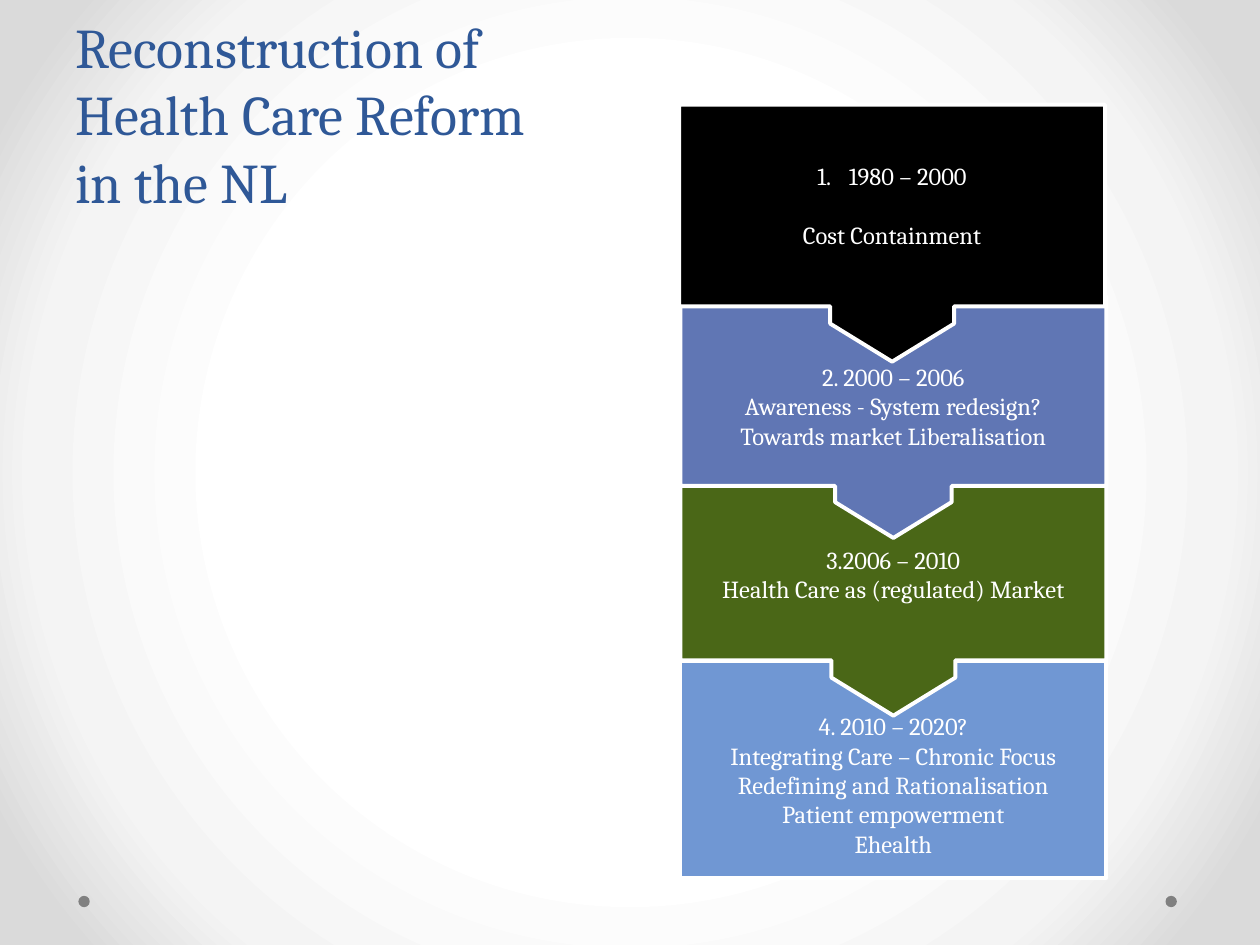
from dataclasses import dataclass

from lxml import etree
from pptx import Presentation
from pptx import util as u
from pptx.dml.color import RGBColor
from pptx.enum import shapes, text
from pptx.oxml import parse_xml
from pptx.oxml.ns import nsdecls, qn

Pt = u.Pt


@dataclass(frozen=True)
class Theme:
    font: str = "Cambria"
    title_size: float = 32
    body_size: float = 14
    line_height: float = 17
    outline: float = 2.25
    title: str = "2F5897"
    white: str = "FFFFFF"
    dot: str = "808080"
    phases: tuple = ("000000", "6076B4", "4A6717", "7097D3")
    backdrop: tuple = ((50, "FFFFFF"), (76, "F4F4F4"), (92, "DADADA"))


T = Theme()
PHASE_LEFT, PHASE_WIDTH = 388.8, 243.4
CALLOUT = (0.482, 0.241, 0.148, 0.785)

# Top, height and lines of each phase, from first to last
PHASES = (
    (59.8, 146.9, ("1980 – 2000", "Cost Containment")),
    (169.2, 138.2, ("2. 2000 – 2006", "Awareness - System redesign?",
                    "Towards market Liberalisation")),
    (262.1, 146.9, ("3.2006 – 2010", "Health Care as (regulated) Market")),
    (378, 123.8, ("4. 2010 – 2020?", "Integrating Care – Chronic Focus",
                  "Redefining and Rationalisation", "Patient empowerment",
                  "Ehealth")),
)


def set_backdrop(s):
    stops = "".join(
        f'<a:gs pos="{pos * 1000}"><a:srgbClr val="{color}"/></a:gs>'
        for pos, color in T.backdrop)
    bg = parse_xml(
        f'<p:bg {nsdecls("p", "a")}><p:bgPr><a:gradFill rotWithShape="1">'
        f'<a:gsLst>{stops}</a:gsLst><a:path path="circle">'
        '<a:fillToRect l="50000" t="50000" r="50000" b="50000"/></a:path>'
        '</a:gradFill><a:effectLst/></p:bgPr></p:bg>')
    s.element.cSld.insert(0, bg)


def add_run(p, words, size, color):
    r = p.add_run()
    r.text = words
    r.font.name = T.font
    r.font.size = Pt(size)
    r.font.color.rgb = RGBColor.from_string(color)


def add_filled(s, kind, left, top, width, height, fill, line=None):
    sp = s.shapes.add_shape(kind, Pt(left), Pt(top), Pt(width), Pt(height))
    sp.shadow.inherit = False
    sp.fill.solid()
    sp.fill.fore_color.rgb = RGBColor.from_string(fill)
    if line:
        sp.line.color.rgb = RGBColor.from_string(line)
        sp.line.width = Pt(T.outline)
    else:
        sp.line.fill.background()
    return sp


def add_title(s, lines):
    sp = s.shapes.add_textbox(Pt(36), Pt(0), Pt(648), Pt(126))
    tf = sp.text_frame
    tf.word_wrap = True
    tf.vertical_anchor = text.MSO_ANCHOR.BOTTOM
    p = tf.paragraphs[0]
    for i, words in enumerate(lines):
        if i:
            p.add_line_break()
        add_run(p, words, T.title_size, T.title)


def number_paragraph(p):
    pPr = p._p.get_or_add_pPr()
    pPr.set("marL", str(Pt(18)))
    pPr.set("indent", str(-Pt(18)))
    etree.SubElement(pPr, qn("a:buFont"), typeface="+mj-lt")
    etree.SubElement(pPr, qn("a:buAutoNum"), type="arabicPeriod")


def add_phase(s, index):
    top, height, lines = PHASES[index]
    first, last = index == 0, index == len(PHASES) - 1
    kind = shapes.MSO_SHAPE.RECTANGLE if last else shapes.MSO_SHAPE.DOWN_ARROW_CALLOUT
    left = PHASE_LEFT - 0.7 if first else PHASE_LEFT
    sp = add_filled(s, kind, left, top, PHASE_WIDTH, height, T.phases[index], T.white)
    if not last:
        for i, value in enumerate(CALLOUT):
            sp.adjustments[i] = value

    tf = sp.text_frame
    tf.word_wrap = True
    tf.vertical_anchor = text.MSO_ANCHOR.MIDDLE
    if not first:  # keep the words clear of the arrow above
        tf.margin_top = Pt(3.6 + T.line_height)
    for i, words in enumerate(lines):
        p = tf.add_paragraph() if i else tf.paragraphs[0]
        p.alignment = text.PP_ALIGN.CENTER
        if first and i:
            p.space_before = Pt(T.line_height)
        elif first:
            number_paragraph(p)
        add_run(p, words, T.body_size, T.white)


def main():
    prs = Presentation()
    prs.slide_width, prs.slide_height = Pt(720), Pt(540)
    s = prs.slides.add_slide(prs.slide_layouts[6])
    set_backdrop(s)

    # Corner dots
    for left in (666, 44.8):
        add_filled(s, shapes.MSO_SHAPE.OVAL, left, 511.9, 6.5, 6.5, T.dot)

    # Phases, last one first so that each arrow overlaps the next box
    for index in reversed(range(len(PHASES))):
        add_phase(s, index)

    add_title(s, ("Reconstruction of", "Health Care Reform", "in the NL"))
    prs.save("out.pptx")


if __name__ == "__main__":
    main()
